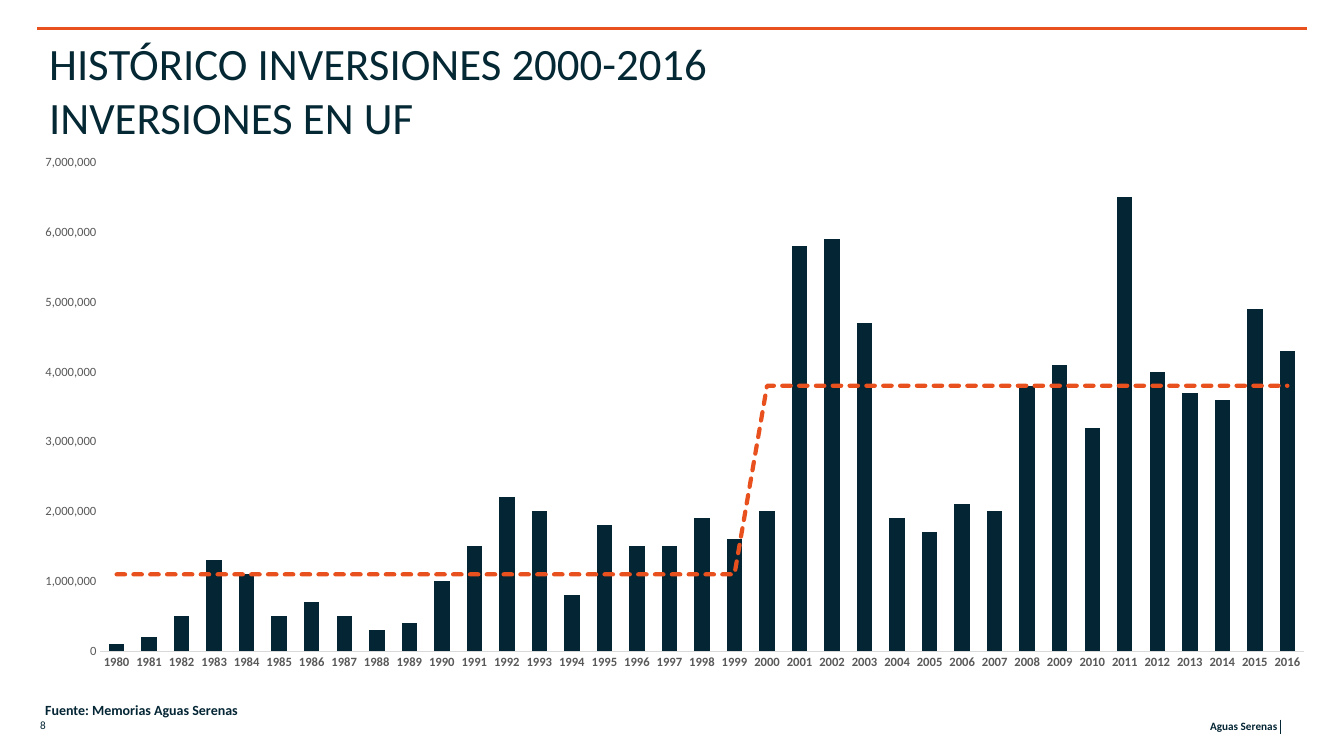
from lxml import etree
from pptx import Presentation
from pptx import util as u
from pptx.chart.data import CategoryChartData
from pptx.dml.color import RGBColor
from pptx.enum import chart as ch, dml, shapes, text
from pptx.oxml import parse_xml
from pptx.oxml.ns import nsdecls, qn

NAVY = RGBColor(0x04, 0x25, 0x34)
TITLE_NAVY = RGBColor(0x04, 0x28, 0x34)
ORANGE = RGBColor(0xE8, 0x51, 0x1E)
GREY = RGBColor(0x59, 0x59, 0x59)
LIGHT_GREY = RGBColor(0xD9, 0xD9, 0xD9)

YEARS = range(1980, 2017)
SPLIT_YEAR = 2000
HUNDRED_THOUSAND = 100_000
INVESTMENT = [1, 2, 5, 13, 11, 5, 7, 5, 3, 4, 10, 15, 22, 20, 8, 18, 15, 15, 19, 16,
              20, 58, 59, 47, 19, 17, 21, 20, 38, 41, 32, 65, 40, 37, 36, 49, 43]
AVERAGE = [11 if year < SPLIT_YEAR else 38 for year in YEARS]
PLOT_LAYOUT = {"x": 0.051, "y": 0.033, "w": 0.943, "h": 0.89}


class SlideBuilder:
    def __init__(self, slide, font_name="Calibri"):
        self.slide = slide
        self.font_name = font_name

    def style_font(self, font, size, color, bold=False):
        values = {"name": self.font_name, "size": u.Pt(size), "bold": bold}
        for name, value in values.items():
            setattr(font, name, value)
        font.color.rgb = color

    def text(self, content, box, size, color=NAVY, bold=False,
             align=text.PP_ALIGN.LEFT, anchor=text.MSO_ANCHOR.TOP):
        sp = self.slide.shapes.add_textbox(*map(u.Pt, box))
        tf = sp.text_frame
        for name, value in {"word_wrap": True, "vertical_anchor": anchor}.items():
            setattr(tf, name, value)
        p = tf.paragraphs[0]
        p.text = content
        p.alignment = align
        for r in p.runs:
            self.style_font(r.font, size, color, bold)

    def line(self, x1, y1, x2, y2, color, width):
        sp = self.slide.shapes.add_connector(
            shapes.MSO_CONNECTOR.STRAIGHT, *map(u.Pt, (x1, y1, x2, y2)))
        sp.line.color.rgb = color
        sp.line.width = u.Pt(width)
        etree.SubElement(sp._element.spPr, qn("a:effectLst"))

    def column_line_chart(self, categories, columns, line, box):
        """Draw columns with a dashed line on the same axes."""
        data = CategoryChartData(number_format="#,##0")
        data.categories = categories
        for name, values in (columns, line):
            data.add_series(name, values)
        chart = self.slide.shapes.add_chart(
            ch.XL_CHART_TYPE.COLUMN_CLUSTERED, *map(u.Pt, box), data).chart
        for name, value in {"has_legend": False, "has_title": False}.items():
            setattr(chart, name, value)
        self.style_font(chart.font, 10, RGBColor(0, 0, 0))
        self.move_last_series_to_line(chart)
        self.set_plot_layout(chart)
        self.style_series(*chart.plots)
        self.style_axes(chart)

    def move_last_series_to_line(self, chart):
        bars = chart.plots[0]._element
        ser = bars.findall(qn("c:ser"))[-1]
        for invert in ser.findall(qn("c:invertIfNegative")):
            ser.remove(invert)
        line_plot = parse_xml(
            f'<c:lineChart {nsdecls("c")}><c:grouping val="standard"/>'
            '<c:varyColors val="0"/><c:marker val="1"/></c:lineChart>')
        line_plot.insert(2, ser)
        for axis_id in bars.findall(qn("c:axId")):
            etree.SubElement(line_plot, qn("c:axId"), val=axis_id.get("val"))
        bars.addnext(line_plot)

    def set_plot_layout(self, chart):
        area = chart.plots[0]._element.getparent()
        for old in area.findall(qn("c:layout")):
            area.remove(old)
        layout = etree.Element(qn("c:layout"))
        manual = etree.SubElement(layout, qn("c:manualLayout"))
        settings = {"layoutTarget": "inner", "xMode": "edge", "yMode": "edge", **PLOT_LAYOUT}
        for name, value in settings.items():
            etree.SubElement(manual, qn(f"c:{name}"), val=str(value))
        area.insert(0, layout)

    def style_series(self, bars, line_plot):
        for name, value in {"gap_width": 110, "overlap": -27, "vary_by_categories": False}.items():
            setattr(bars, name, value)
        fill = bars.series[0].format.fill
        fill.solid()
        fill.fore_color.rgb = NAVY
        average = line_plot.series[0]
        average.smooth = False
        average.marker.style = ch.XL_MARKER_STYLE.NONE
        ln = average.format.line
        ln.color.rgb = ORANGE
        ln.width = u.Pt(3)
        ln.dash_style = dml.MSO_LINE.SQUARE_DOT
        ln_xml = average._element.find(qn("c:spPr")).find(qn("a:ln"))
        ln_xml.set("cap", "rnd")
        ln_xml.find(qn("a:prstDash")).set("val", "sysDash")

    def style_axes(self, chart):
        for axis, bold in ((chart.category_axis, True), (chart.value_axis, False)):
            formats = {"has_major_gridlines": False,
                       "major_tick_mark": ch.XL_TICK_MARK.NONE,
                       "minor_tick_mark": ch.XL_TICK_MARK.NONE}
            for name, value in formats.items():
                setattr(axis, name, value)
            self.style_font(axis.tick_labels.font, 9, GREY, bold)
        base = chart.category_axis.format.line
        base.color.rgb = LIGHT_GREY
        base.width = u.Pt(0.75)
        values = chart.value_axis
        scale = {"minimum_scale": 0, "maximum_scale": 7_000_000, "major_unit": 1_000_000}
        for name, value in scale.items():
            setattr(values, name, value)
        values.format.line.fill.background()
        labels = values.tick_labels
        labels.number_format = "#,##0"
        labels.number_format_is_linked = False


def in_units(values):
    return [value * HUNDRED_THOUSAND for value in values]


def main():
    prs = Presentation()
    prs.slide_width, prs.slide_height = u.Pt(960), u.Pt(540)
    s = SlideBuilder(prs.slides.add_slide(prs.slide_layouts[6]))
    middle = text.MSO_ANCHOR.MIDDLE

    s.text("Aguas Serenas", (757.5, 507.5, 162, 21.6), 8, bold=True,
           align=text.PP_ALIGN.RIGHT, anchor=middle)
    s.text("8", (21.6, 507, 162, 21.6), 8, anchor=middle)
    s.line(914.4, 514, 914.4, 524, NAVY, 0.5)
    s.line(26.6, 20.2, 933.8, 20.2, ORANGE, 2)
    s.text("Fuente: Memorias Aguas Serenas", (25.2, 497.5, 587.5, 19.4), 10, bold=True)
    s.column_line_chart([str(year) for year in YEARS],
                        ("Inversión", in_units(INVESTMENT)),
                        ("Promedio", in_units(AVERAGE)),
                        (25.2, 103, 911.5, 392.4))
    s.text("HISTÓRICO INVERSIONES 2000-2016\vINVERSIONES EN UF",
           (28, 22.3, 905, 51.8), 32, TITLE_NAVY)
    prs.save("out.pptx")


if __name__ == "__main__":
    main()
